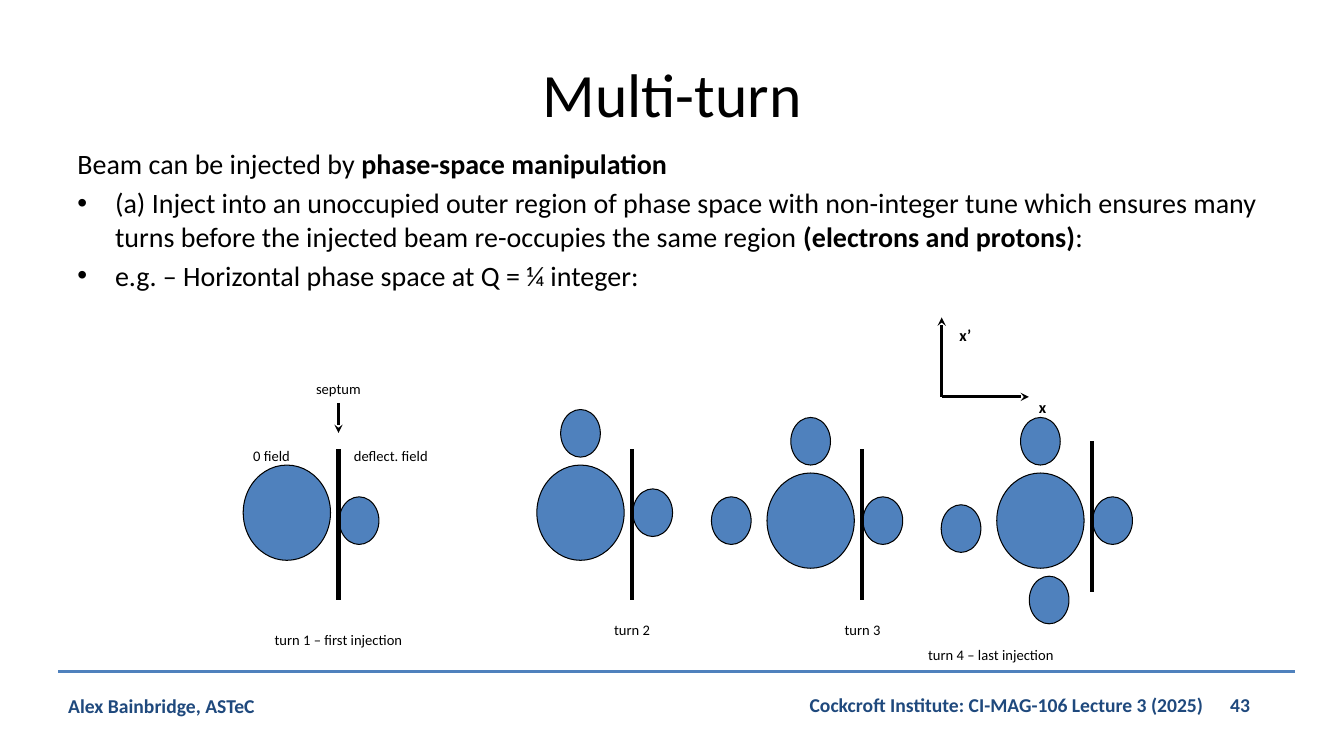
from pptx import Presentation
from pptx.dml.color import RGBColor
from pptx.enum.shapes import MSO_CONNECTOR as CONN, MSO_SHAPE as SHAPE
from pptx.enum.text import MSO_ANCHOR as ANCHOR, PP_ALIGN as ALIGN
from pptx.oxml.ns import qn
from pptx.util import Cm, Pt
from lxml import etree

COLORS = {"text": "000000", "footer": "1F497D", "beam": "4F81BD", "line": "000000"}
FONT = "Calibri"
LABEL_SIZE = 10.4
AXIS_SIZE = 11.5
LABEL_INSET = 0.56
BIG = (2.2, 2.4)
SMALL = (1.0, 1.2)


def add_run(p, text, size, color="text", bold=False):
    r = p.add_run()
    r.text = text
    r.font.name = FONT
    r.font.size = Pt(size)
    r.font.bold = bold
    r.font.color.rgb = RGBColor.from_string(COLORS[color])


def add_tab_stop(p, pos):
    tabs = etree.SubElement(p._p.get_or_add_pPr(), qn("a:tabLst"))
    etree.SubElement(tabs, qn("a:tab"), pos=str(Cm(pos)), algn="l")


def add_box(slide, x, y, w, h, inset_top=0.13, anchor=ANCHOR.TOP):
    tf = slide.shapes.add_textbox(Cm(x), Cm(y), Cm(w), Cm(h)).text_frame
    tf.word_wrap = True
    tf.margin_top = Cm(inset_top)
    tf.vertical_anchor = anchor
    return tf


def add_label(slide, text, x, y, w, h=1.02, align=ALIGN.CENTER, size=LABEL_SIZE, bold=False):
    p = add_box(slide, x, y, w, h, LABEL_INSET).paragraphs[0]
    p.alignment = align
    add_run(p, text, size, bold=bold)
    return p


def add_line(slide, x1, y1, x2, y2, width, color="line", arrow=False):
    line = slide.shapes.add_connector(CONN.STRAIGHT, Cm(x1), Cm(y1), Cm(x2), Cm(y2))
    line.line.color.rgb = RGBColor.from_string(COLORS[color])
    line.line.width = Pt(width)
    if arrow:
        etree.SubElement(line.line._get_or_add_ln(), qn("a:tailEnd"), type="stealth")
    etree.SubElement(line._element.spPr, qn("a:effectLst"))


def add_beam(slide, x, y, size):
    w, h = size
    sp = slide.shapes.add_shape(SHAPE.OVAL, Cm(x), Cm(y), Cm(w), Cm(h))
    sp.shadow.inherit = False
    sp.fill.solid()
    sp.fill.fore_color.rgb = RGBColor.from_string(COLORS["beam"])
    sp.line.color.rgb = RGBColor.from_string(COLORS["line"])
    sp.line.width = Pt(0.75)


def add_title(slide, x, y, w, h):
    p = add_box(slide, x, y, w, h, anchor=ANCHOR.MIDDLE).paragraphs[0]
    p.alignment = ALIGN.CENTER
    add_run(p, "Multi-turn", 44)


def add_body(slide, x, y, w, h):
    paragraphs = [
        (False, [("Beam can be injected by ", False), ("phase-space manipulation", True)]),
        (True, [("(a) Inject into an unoccupied outer region of phase space with non-integer tune "
                 "which ensures many turns before the injected beam re-occupies the same region ", False),
                ("(electrons and protons)", True), (":", False)]),
        (True, [("e.g. – Horizontal phase space at Q = ¼ integer:", False)]),
    ]
    tf = add_box(slide, x, y, w, h)
    for i, (bullet, runs) in enumerate(paragraphs):
        p = tf.add_paragraph() if i else tf.paragraphs[0]
        if bullet:
            p.space_before = Pt(4)
            pPr = p._p.get_or_add_pPr()
            pPr.set("marL", str(Cm(0.95)))
            pPr.set("indent", str(-Cm(0.95)))
            etree.SubElement(pPr, qn("a:buFont"), typeface="Arial")
            etree.SubElement(pPr, qn("a:buChar"), char="•")
        for text, bold in runs:
            add_run(p, text, 20, bold=bold)


def add_axes(slide, x, y, w, h):
    bottom = y + h
    add_line(slide, x, bottom, x, y, 2, arrow=True)
    add_line(slide, x, bottom, x + w, bottom, 2, arrow=True)
    add_label(slide, "x", x + w, bottom - 0.54, 1.8, 1.09, ALIGN.LEFT, AXIS_SIZE, True)
    add_label(slide, "x’", x + 0.2, y - 0.35, 1.6, 1.09, ALIGN.LEFT, AXIS_SIZE, True)


def add_turn(slide, septum, top, core, satellites, height=3.8):
    core_y = top + core
    add_beam(slide, septum - 2.4, core_y, BIG)
    for dx, dy in satellites:
        add_beam(slide, septum + dx, core_y + dy, SMALL)
    add_line(slide, septum, top, septum, top + height, 3)


def add_septum_labels(slide, septum, top):
    add_label(slide, "septum", septum - 1.5, top - 2.31, 3)
    add_line(slide, septum, top - 1.17, septum, top - 0.41, 2, arrow=True)
    fields = add_label(slide, "0 field\tdeflect. field", septum - 2.4, top - 0.61, 6.4, align=ALIGN.LEFT)
    add_tab_stop(fields, 2.54)


def add_diagram(slide, x, y):
    upper, left, lower = (-1.8, -1.4), (-3.8, 0.6), (-1.58, 2.6)
    injected = (0.02, 0.6)
    turns = [
        (0, 0, 0.4, [(0.02, 0.8)]),
        (7.4, 0, 0.4, [injected, upper]),
        (13.2, 0, 0.6, [injected, upper, left]),
        (18.99, -0.2, 0.8, [injected, upper, (-3.8, 0.8), lower]),
    ]
    for dx, dy, core, satellites in turns:
        add_turn(slide, x + dx, y + dy, core, satellites)
    captions = [
        ("turn 1 – first injection", -3.4, 4.01, 6.8, ALIGN.CENTER),
        ("turn 2", 5.9, 3.78, 3, ALIGN.CENTER),
        ("turn 3", 11.91, 3.78, 2.6, ALIGN.CENTER),
        ("turn 4 – last injection", 14.61, 4.39, 6.5, ALIGN.LEFT),
    ]
    for text, dx, dy, w, align in captions:
        add_label(slide, text, x + dx, y + dy, w, align=align)
    add_septum_labels(slide, x, y)


def add_footer(slide, x, y, w):
    add_line(slide, x, y, x + w, y, 2, "beam")
    parts = [
        ("Alex Bainbridge, ASTeC", x, 0.43, 13.06, ALIGN.LEFT),
        ("Cockcroft Institute: CI-MAG-106 Lecture 3 (2025)\t43", x + 15.11, 0.4, 18.75, ALIGN.CENTER),
    ]
    for text, left, dy, width, align in parts:
        p = add_box(slide, left, y + dy, width, 0.86).paragraphs[0]
        p.alignment = align
        add_run(p, text, 14, "footer", True)
        if "\t" in text:
            add_tab_stop(p, 10.6)


def main():
    prs = Presentation()
    prs.slide_width, prs.slide_height = Cm(33.87), Cm(19.05)
    slide = prs.slides.add_slide(prs.slide_layouts[6])
    add_footer(slide, 1.47, 16.92, 31.17)
    add_title(slide, 1.7, 0.76, 30.48, 3.18)
    add_body(slide, 1.7, 3.56, 30.48, 12.57)
    add_axes(slide, 23.73, 8, 2.2, 2)
    add_diagram(slide, 8.53, 11.32)
    prs.save("out.pptx")


if __name__ == "__main__":
    main()
